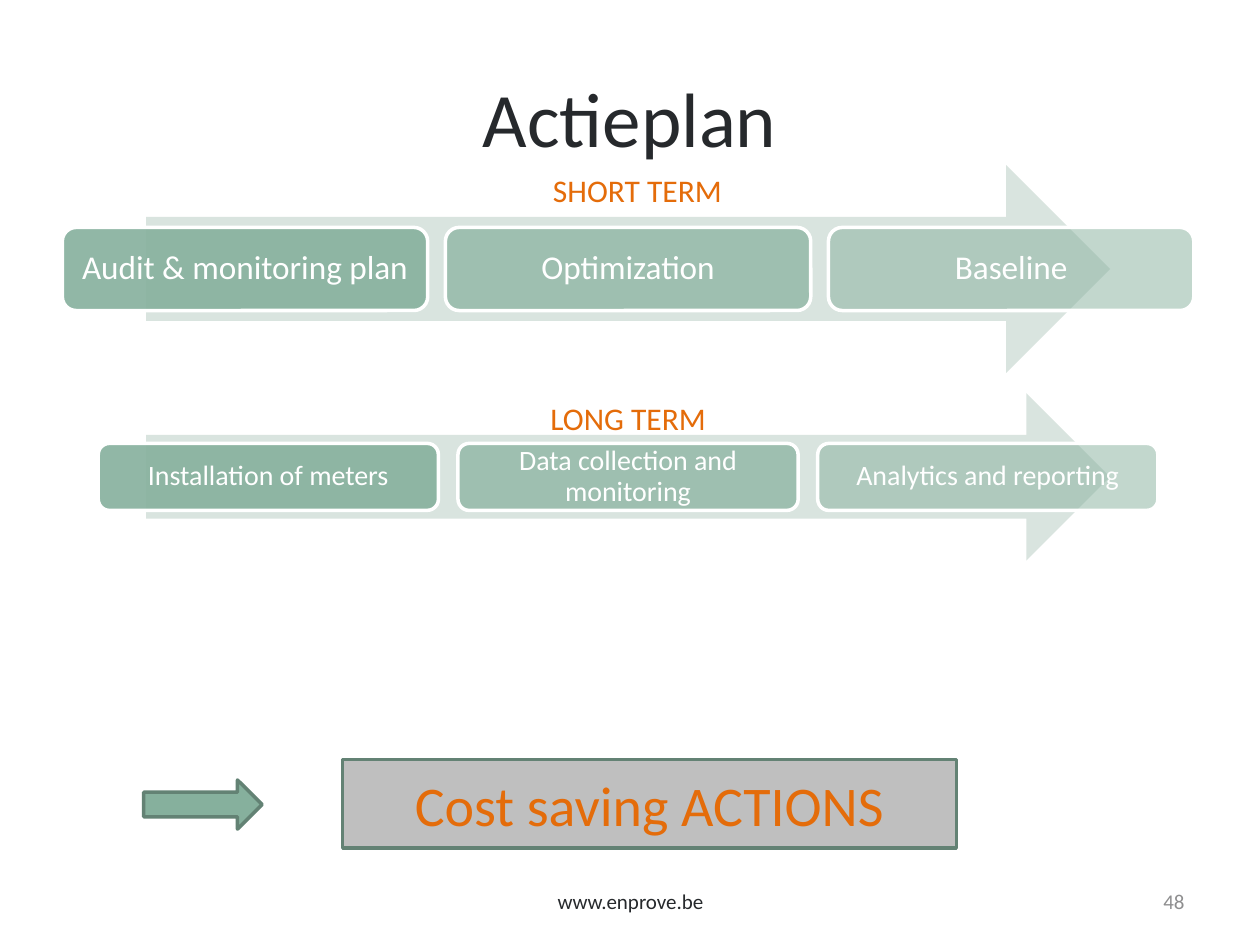
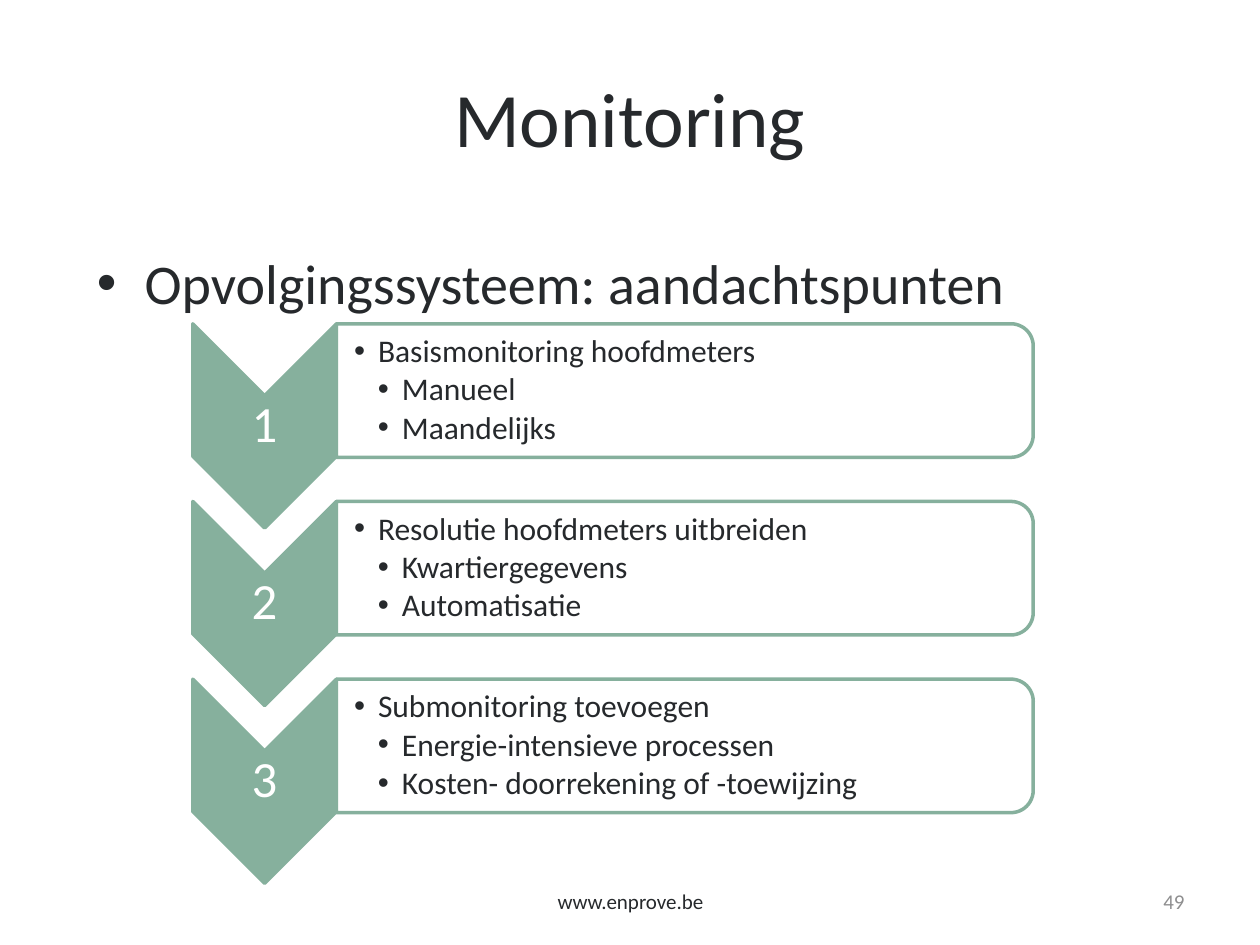
from dataclasses import dataclass
from typing import NamedTuple, Optional

from lxml import etree
from pptx import Presentation
from pptx.dml.color import RGBColor
from pptx.enum.shapes import MSO_SHAPE as SHAPE
from pptx.enum.text import MSO_ANCHOR as ANCHOR, PP_ALIGN as ALIGN
from pptx.oxml.ns import qn
from pptx.util import Inches, Pt

# The slide is a grid of 100 columns by 75 rows; all lengths are in its units.
COLS, ROWS = 100, 75
WIDTH, HEIGHT = Inches(10), Inches(7.5)

FONT = "Calibri"
INK = RGBColor(0x26, 0x29, 0x2C)
WHITE = RGBColor(0xFF, 0xFF, 0xFF)
GREEN = RGBColor(0x86, 0xB0, 0x9D)
DARK_GREEN = RGBColor(0x63, 0x82, 0x74)
PALE_GREEN = RGBColor(0xD9, 0xE4, 0xDF)
ORANGE = RGBColor(0xE4, 0x6C, 0x0A)
SILVER = RGBColor(0xBF, 0xBF, 0xBF)
GREY = RGBColor(0x8E, 0x8E, 0x8F)


class Box(NamedTuple):
    x: float
    y: float
    w: float
    h: float


class Style(NamedTuple):
    size: float
    color: RGBColor
    align: ALIGN = ALIGN.CENTER
    anchor: ANCHOR = ANCHOR.MIDDLE
    spacing: float = 1.0


class Line(NamedTuple):
    text: str
    indent: Optional[float] = None  # left margin of a bulleted line
    hanging: float = 0


@dataclass
class Flow:
    label: str
    label_x: float
    arrow: Box
    box_w: float
    gap: float
    size: float
    inset: float
    stages: tuple[str, ...]


@dataclass
class Step:
    number: str
    heading: str
    details: tuple[str, ...]


TITLE = Style(44, INK)
TITLE_BOX = Box(5, 3, 90, 12.5)
FOOTER = Style(12, INK)
FOOTER_BOX = Box(34.2, 69.5, 31.7, 4)
PAGE = Style(12, GREY, ALIGN.RIGHT)
PAGE_BOX = Box(71.7, 69.5, 23.3, 4)
LABEL = Style(18, ORANGE, ALIGN.LEFT, ANCHOR.TOP)
CALLOUT = Style(32, ORANGE)
LEAD = Style(32, INK, ALIGN.LEFT, ANCHOR.TOP)
NUMBER = Style(29, WHITE, spacing=0.9)
DETAIL = Style(18, INK, ALIGN.LEFT, spacing=0.9)

STAGE_OPACITY = (90, 70, 50)
FLOWS = (
    Flow("SHORT TERM", 42.9, Box(11.6, 13.1, 76.5, 16.5), 29, 1.4, 19, 0.8,
         ("Audit & monitoring plan", "Optimization", "Baseline")),
    Flow("LONG TERM", 42.7, Box(11.6, 31.2, 76.5, 13.3), 27, 1.55, 16, 0.7,
         ("Installation of meters", "Data collection and monitoring",
          "Analytics and reporting")),
)

STEP_X, STEP_Y, STEP_PITCH = 15.3, 25.7, 14.1
CHEVRON_W, CHEVRON_H = 11.4, 16.2
PANEL_W, PANEL_H = 55.3, 10.6
STEPS = (
    Step("1", "Basismonitoring hoofdmeters", ("Manueel", "Maandelijks")),
    Step("2", "Resolutie hoofdmeters uitbreiden",
         ("Kwartiergegevens", "Automatisatie")),
    Step("3", "Submonitoring toevoegen",
         ("Energie-intensieve processen",
          "Kosten- doorrekening of -toewijzing")),
)


def col(n: float) -> int:
    return round(WIDTH * n / COLS)


def row(n: float) -> int:
    return round(HEIGHT * n / ROWS)


def place(box: Box) -> tuple[int, int, int, int]:
    return col(box.x), row(box.y), col(box.w), row(box.h)


def write(sp, lines: list[Line], style: Style, inset: Optional[tuple] = None,
          wrap: bool = True) -> None:
    """Fill a shape with text; inset is (left, all other sides)."""
    tf = sp.text_frame
    tf.word_wrap = wrap
    tf.vertical_anchor = style.anchor
    if inset:
        tf.margin_left = col(inset[0])
        tf.margin_right = tf.margin_top = tf.margin_bottom = col(inset[1])
    for i, line in enumerate(lines):
        p = tf.paragraphs[0] if i == 0 else tf.add_paragraph()
        if line.indent is not None:
            pPr = p._p.get_or_add_pPr()
            pPr.set("marL", str(col(line.indent)))
            pPr.set("indent", str(-col(line.hanging)))
            etree.SubElement(pPr, qn("a:buFont"), typeface="Arial")
            etree.SubElement(pPr, qn("a:buChar"), char="•")
        p.alignment = style.align
        p.line_spacing = style.spacing
        if i < len(lines) - 1:
            p.space_after = Pt(2.5)
        r = p.add_run()
        r.text = line.text
        r.font.name = FONT
        r.font.size = Pt(style.size)
        r.font.color.rgb = style.color


def add_text(slide, box: Box, lines: list[Line], style: Style,
             inset: Optional[tuple] = None, wrap: bool = True) -> None:
    write(slide.shapes.add_textbox(*place(box)), lines, style, inset, wrap)


def add_shape(slide, kind: SHAPE, box: Box, fill: RGBColor,
              line: Optional[RGBColor] = None, opacity: int = 100):
    sp = slide.shapes.add_shape(kind, *place(box))
    sp.shadow.inherit = False
    sp.fill.solid()
    sp.fill.fore_color.rgb = fill
    if opacity < 100:
        color = sp.fill._xPr.find(qn("a:solidFill"))[0]
        etree.SubElement(color, qn("a:alpha"), val=str(opacity * 1000))
    if line is None:
        sp.line.fill.background()
    else:
        sp.line.color.rgb = line
        sp.line.width = Pt(2)
    return sp


def add_turned(slide, kind: SHAPE, box: Box, fill: RGBColor,
               opacity: int = 100) -> None:
    """Add a shape that fills the box after a quarter turn clockwise."""
    shift = (box.w - box.h) / 2
    sp = add_shape(slide, kind,
                   Box(box.x + shift, box.y - shift, box.h, box.w),
                   fill, GREEN, opacity)
    sp.rotation = 90


def add_slide(prs, title: str, page: int):
    slide = prs.slides.add_slide(prs.slide_layouts[6])
    add_text(slide, TITLE_BOX, [Line(title)], TITLE)
    add_text(slide, FOOTER_BOX, [Line("www.enprove.be")], FOOTER)
    add_text(slide, PAGE_BOX, [Line(str(page))], PAGE)
    return slide


def add_flow(slide, flow: Flow) -> None:
    """Draw an arrow with its stages centred along it and a label on top."""
    arrow = flow.arrow
    add_shape(slide, SHAPE.RIGHT_ARROW, arrow, PALE_GREEN)
    pitch = flow.box_w + flow.gap
    total = len(flow.stages) * pitch - flow.gap
    left = arrow.x + (arrow.w - total) / 2
    for i, (stage, opacity) in enumerate(zip(flow.stages, STAGE_OPACITY)):
        box = Box(left + i * pitch, arrow.y + 0.3 * arrow.h,
                  flow.box_w, 0.4 * arrow.h)
        sp = add_shape(slide, SHAPE.ROUNDED_RECTANGLE, box, GREEN, WHITE,
                       opacity)
        write(sp, [Line(stage)], Style(flow.size, WHITE, spacing=0.9),
              (flow.inset, flow.inset))
    add_text(slide, Box(flow.label_x, arrow.y, 15.5, 4), [Line(flow.label)],
             LABEL, wrap=False)


def add_step(slide, step: Step, y: float) -> None:
    """Draw a numbered chevron pointing down with its panel of details."""
    add_turned(slide, SHAPE.CHEVRON, Box(STEP_X, y, CHEVRON_W, CHEVRON_H),
               GREEN)
    add_text(slide, Box(STEP_X, y + CHEVRON_W / 2, CHEVRON_W,
                        CHEVRON_H - CHEVRON_W),
             [Line(step.number)], NUMBER, (0.2, 0.2))
    panel = Box(STEP_X + CHEVRON_W, y, PANEL_W, PANEL_H)
    add_turned(slide, SHAPE.ROUND_2_SAME_RECTANGLE, panel, WHITE, 90)
    lines = [Line(step.heading, 1.9, 1.9)]
    lines += [Line(text, 3.8, 1.9) for text in step.details]
    add_text(slide, panel, lines, DETAIL, (1.4, 0.1))


def build_action_plan(prs) -> None:
    slide = add_slide(prs, "Actieplan", 48)
    for flow in FLOWS:
        add_flow(slide, flow)
    callout = add_shape(slide, SHAPE.RECTANGLE, Box(27.2, 60.3, 48.7, 7),
                        SILVER, DARK_GREEN)
    write(callout, [Line("Cost saving ACTIONS")], CALLOUT)
    add_shape(slide, SHAPE.RIGHT_ARROW, Box(11.4, 61.9, 9.4, 3.9),
              GREEN, DARK_GREEN)


def build_monitoring(prs) -> None:
    slide = add_slide(prs, "Monitoring", 49)
    add_text(slide, Box(6.7, 19.2, 90, 6.4),
             [Line("Opvolgingssysteem: aandachtspunten", 3.8, 3.8)], LEAD)
    for i, step in enumerate(STEPS):
        add_step(slide, step, STEP_Y + i * STEP_PITCH)


def main() -> None:
    prs = Presentation()
    prs.slide_width, prs.slide_height = WIDTH, HEIGHT
    build_action_plan(prs)
    build_monitoring(prs)
    prs.save("out.pptx")


if __name__ == "__main__":
    main()
